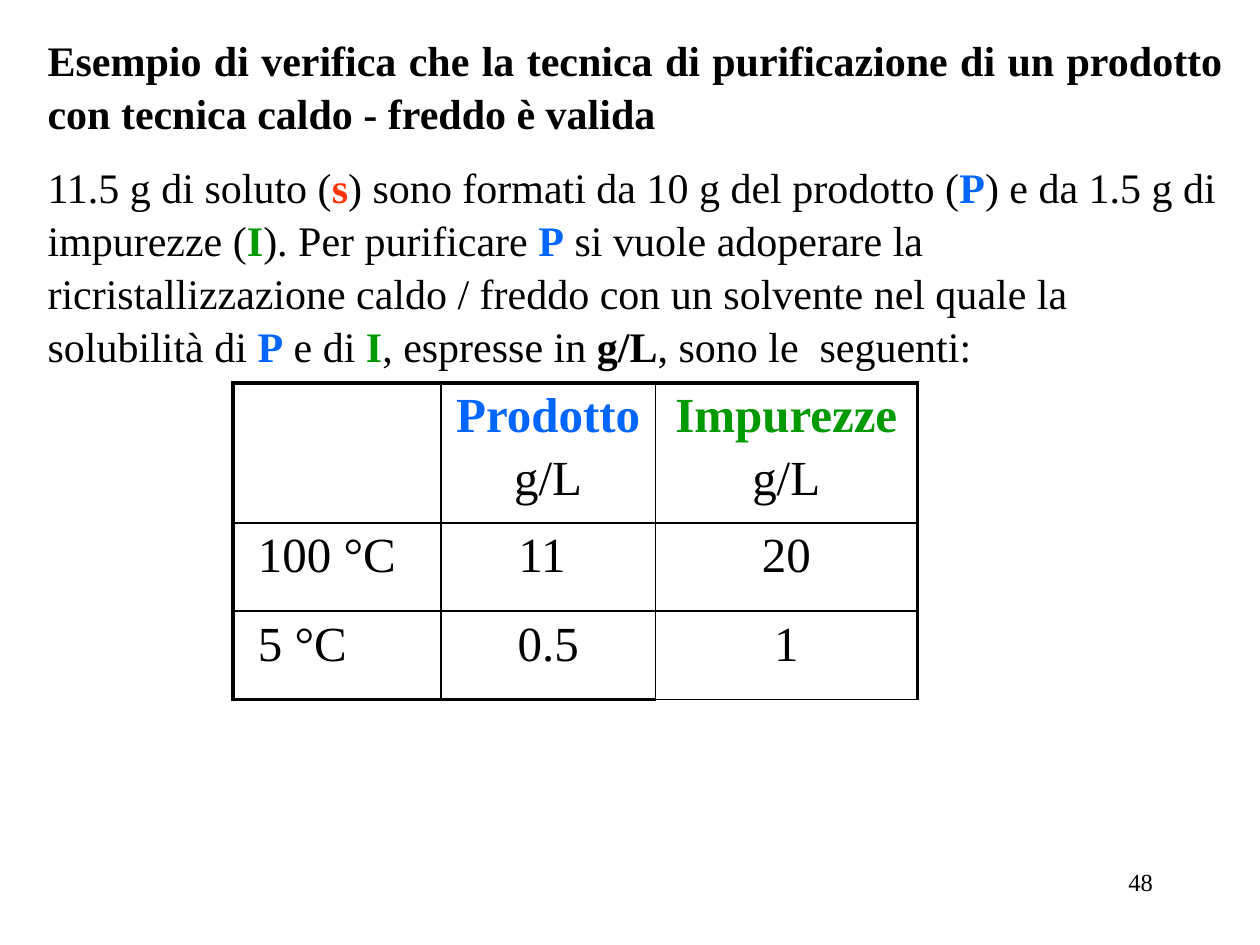
from dataclasses import dataclass

from lxml.etree import SubElement
from pptx import Presentation
from pptx.dml.color import RGBColor
from pptx.enum.text import MSO_AUTO_SIZE as AutoSize, PP_ALIGN as Align
from pptx.oxml.ns import qn
from pptx.util import Cm, Pt

FONT = "Times New Roman"
BLACK, RED, BLUE, GREEN = "000000", "FF3300", "0066FF", "009900"
THIN, THICK = 1, 2.25


@dataclass(frozen=True)
class Span:
    text: str
    color: str = BLACK
    bold: bool = False


SOLUTE = Span("s", RED, True)
PRODUCT = Span("P", BLUE, True)
IMPURITY = Span("I", GREEN, True)

TITLE = [Span("Esempio di verifica che la tecnica di purificazione di un prodotto "
              "con tecnica caldo - freddo è valida", bold=True)]
PROBLEM = [
    Span("11.5 g di soluto ("), SOLUTE,
    Span(") sono formati da 10 g del prodotto ("), PRODUCT,
    Span(") e da 1.5 g di impurezze ("), IMPURITY,
    Span("). Per purificare "), PRODUCT,
    Span(" si vuole adoperare la ricristallizzazione caldo / freddo "
         "con un solvente nel quale la solubilità di "), PRODUCT,
    Span(" e di "), IMPURITY,
    Span(", espresse in "), Span("g/L", bold=True),
    Span(", sono le  seguenti:"),
]

# Each cell is a list of one-span paragraphs
UNIT = Span("g/L")
SOLUBILITY = [
    [[], [Span("Prodotto", BLUE, True), UNIT], [Span("Impurezze", GREEN, True), UNIT]],
    [[Span(" 100 °C")], [Span("11 ")], [Span("20")]],
    [[Span(" 5 °C")], [Span("0.5")], [Span("1")]],
]
COLUMN_WIDTHS = [4.19, 4.32, 5.28]
ROW_HEIGHTS = [2.82, 1.78, 1.78]


def rgb(color: str) -> RGBColor:
    return RGBColor.from_string(color)


def write_paragraph(frame, spans: list[Span], *, size: float, align=Align.LEFT,
                    before: float = 0, spacing: float = 1.0, first: bool = False) -> None:
    para = frame.paragraphs[0] if first else frame.add_paragraph()
    para.alignment = align
    para.space_before = Pt(before)
    para.line_spacing = spacing
    for span in spans:
        run = para.add_run()
        run.text = span.text
        run.font.name = FONT
        run.font.size = Pt(size)
        run.font.bold = span.bold
        run.font.color.rgb = rgb(span.color)


def add_text_frame(slide, left: float, top: float, width: float, height: float):
    box = slide.shapes.add_textbox(Cm(left), Cm(top), Cm(width), Cm(height))
    box.text_frame.word_wrap = True
    return box.text_frame


def set_borders(cell, widths: dict[str, float]) -> None:
    properties = cell._tc.get_or_add_tcPr()
    for side, width in widths.items():
        line = SubElement(properties, qn(f"a:ln{side}"), w=str(Pt(width)))
        fill = SubElement(line, qn("a:solidFill"))
        SubElement(fill, qn("a:srgbClr"), val=BLACK)


def add_solubility_table(slide, left: float, top: float) -> None:
    table = slide.shapes.add_table(
        len(ROW_HEIGHTS), len(COLUMN_WIDTHS), Cm(left), Cm(top),
        Cm(sum(COLUMN_WIDTHS)), Cm(sum(ROW_HEIGHTS))).table
    table.first_row = table.horz_banding = False
    for column, width in zip(table.columns, COLUMN_WIDTHS):
        column.width = Cm(width)
    for row, height in zip(table.rows, ROW_HEIGHTS):
        row.height = Cm(height)

    last_row, last_column = len(ROW_HEIGHTS) - 1, len(COLUMN_WIDTHS) - 1
    for r, row_content in enumerate(SOLUBILITY):
        for c, lines in enumerate(row_content):
            cell = table.cell(r, c)
            # Thick outer frame, except below the last column
            set_borders(cell, {
                "L": THICK if c == 0 else THIN,
                "R": THICK if c == last_column else THIN,
                "T": THICK if r == 0 else THIN,
                "B": THICK if r == last_row and c < last_column else THIN,
            })
            cell.fill.background()
            for index, span in enumerate(lines):
                write_paragraph(cell.text_frame, [span], size=28, before=4.5,
                                align=Align.CENTER if c else Align.LEFT,
                                first=index == 0)


def main() -> None:
    deck = Presentation()
    deck.slide_width, deck.slide_height = Cm(25.4), Cm(19.05)
    slide = deck.slides.add_slide(deck.slide_layouts[6])

    # Title and problem statement
    frame = add_text_frame(slide, 0.71, 0.53, 24.2, 6.93)
    frame.auto_size = AutoSize.SHAPE_TO_FIT_TEXT
    write_paragraph(frame, TITLE, size=24, align=Align.JUSTIFY, before=12,
                    spacing=1.05, first=True)
    write_paragraph(frame, PROBLEM, size=24, before=12, spacing=1.05)

    # Solubility data
    add_solubility_table(slide, 4.7, 7.72)

    # Page number
    frame = add_text_frame(slide, 18.21, 17.35, 5.28, 1.27)
    write_paragraph(frame, [Span("48")], size=14, align=Align.RIGHT, first=True)

    deck.save("out.pptx")


if __name__ == "__main__":
    main()
